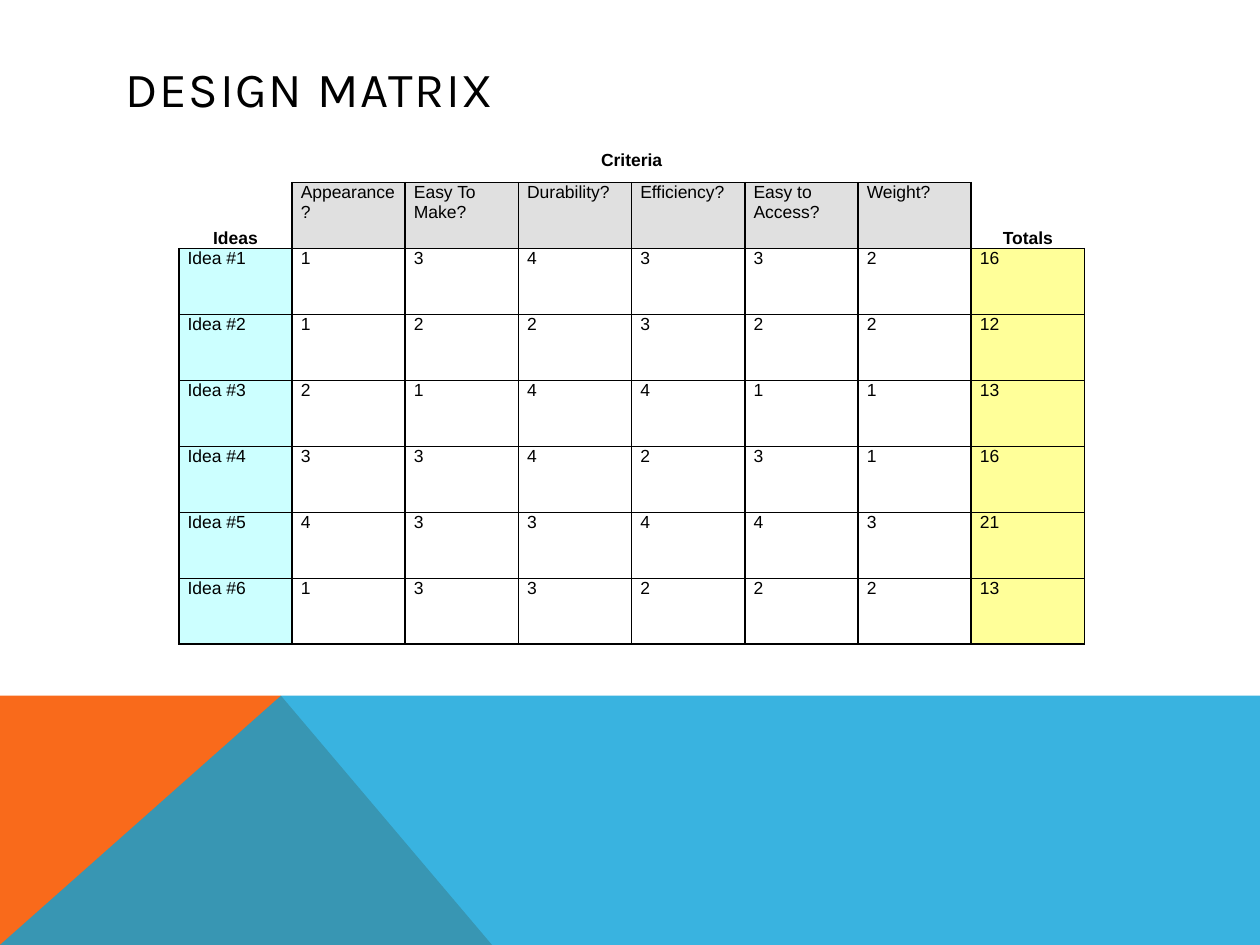
from lxml import etree
from pptx import Presentation
from pptx.dml.color import RGBColor
from pptx.enum.text import MSO_ANCHOR, PP_ALIGN
from pptx.oxml.ns import qn
from pptx.util import Pt

LEFT, CENTER = PP_ALIGN.LEFT, PP_ALIGN.CENTER
TOP, MIDDLE, BOTTOM = MSO_ANCHOR.TOP, MSO_ANCHOR.MIDDLE, MSO_ANCHOR.BOTTOM

BLACK = RGBColor(0x00, 0x00, 0x00)
ORANGE = RGBColor(0xF9, 0x6A, 0x1B)
BLUE = RGBColor(0x08, 0xA1, 0xD9)
CRITERION_GREY = RGBColor(0xE0, 0xE0, 0xE0)
IDEA_CYAN = RGBColor(0xCC, 0xFF, 0xFF)
TOTAL_YELLOW = RGBColor(0xFF, 0xFF, 0x99)

SLIDE_W, SLIDE_H = 720, 540
BAND_TOP, PEAK_X, SLOPE_END = 397.6, 160.6, 281.2
COLUMN_W, CAPTION_H, ROW_H = 64.7, 18, 37.7
NO_STYLE_NO_GRID = "{2D5ABB26-0587-4C30-8999-92F81FD0307C}"

CRITERIA = ["Appearance?", "Easy To Make?", "Durability?", "Efficiency?",
            "Easy to Access?", "Weight?"]
SCORES = [
    [1, 3, 4, 3, 3, 2],
    [1, 2, 2, 3, 2, 2],
    [2, 1, 4, 4, 1, 1],
    [3, 3, 4, 2, 3, 1],
    [4, 3, 3, 4, 4, 3],
    [1, 3, 3, 2, 2, 2],
]
LAST_COLUMN = len(CRITERIA) + 1


def write(frame, text, font="Arial", size=10, bold=False, align=LEFT, spacing=0):
    """Put one formatted paragraph in a text frame; spacing is between letters."""
    paragraph = frame.paragraphs[0]
    paragraph.alignment = align
    if text:
        run = paragraph.add_run()
        run.text = text
        run.font.name = font
        run.font.size = Pt(size)
        run.font.bold = bold
        run.font.color.rgb = BLACK
        if spacing:
            run.font._element.set("spc", str(spacing * 100))
    # An empty cell also needs the size, or its row grows.
    end = paragraph._p.get_or_add_endParaRPr()
    end.set("sz", str(size * 100))


def add_polygon(slide, points, color, opacity=100):
    corners = [(Pt(x), Pt(y)) for x, y in points]
    builder = slide.shapes.build_freeform(*corners[0])
    builder.add_line_segments(corners[1:], close=True)
    polygon = builder.convert_to_shape()
    polygon.shadow.inherit = False
    polygon.line.fill.background()
    polygon.fill.solid()
    polygon.fill.fore_color.rgb = color
    if opacity < 100:
        srgb = polygon._element.spPr.find(".//" + qn("a:srgbClr"))
        etree.SubElement(srgb, qn("a:alpha"), val=str(opacity * 1000))


def add_title(slide, text):
    title = slide.shapes.add_textbox(Pt(64.8), Pt(28.8), Pt(592), Pt(43.2))
    frame = title.text_frame
    frame.word_wrap = True
    frame.vertical_anchor = MIDDLE
    write(frame, text, font="Karla", size=28, spacing=1)


def is_boxed(row, column):
    """Every idea row is ruled; the criteria row only between its end labels."""
    if not 0 <= column <= LAST_COLUMN:
        return False
    return row >= 2 or (row == 1 and 0 < column < LAST_COLUMN)


def set_borders(cell, row, column):
    """Rule each side that this cell or its neighbour has boxed."""
    properties = cell._tc.get_or_add_tcPr()
    neighbours = {"L": (row, column - 1), "R": (row, column + 1),
                  "T": (row - 1, column), "B": (row + 1, column)}
    for side, neighbour in neighbours.items():
        line = etree.SubElement(properties, qn("a:ln" + side), w=str(Pt(1)))
        if is_boxed(row, column) or is_boxed(*neighbour):
            fill = etree.SubElement(line, qn("a:solidFill"))
            etree.SubElement(fill, qn("a:srgbClr"), val=str(BLACK))
        else:
            etree.SubElement(line, qn("a:noFill"))


def cell_color(row, column):
    if not is_boxed(row, column):
        return None
    if row == 1:
        return CRITERION_GREY
    return {0: IDEA_CYAN, LAST_COLUMN: TOTAL_YELLOW}.get(column)


def format_cell(cell, row, column, text):
    cell.margin_left = cell.margin_right = Pt(5)
    cell.margin_top = cell.margin_bottom = Pt(0)
    is_label = not is_boxed(row, column)
    cell.vertical_anchor = BOTTOM if is_label and row == 1 else TOP
    write(cell.text_frame, text, bold=is_label, align=CENTER if is_label else LEFT)
    set_borders(cell, row, column)
    color = cell_color(row, column)
    if color is None:
        cell.fill.background()
    else:
        cell.fill.solid()
        cell.fill.fore_color.rgb = color


def add_matrix(slide):
    rows = [["", "Criteria"] + [""] * len(CRITERIA),
            ["Ideas", *CRITERIA, "Totals"]]
    for number, scores in enumerate(SCORES, start=1):
        rows.append([f"Idea #{number}", *map(str, scores), str(sum(scores))])

    heights = [CAPTION_H] + [ROW_H] * (len(rows) - 1)
    width = COLUMN_W * (LAST_COLUMN + 1)
    frame = slide.shapes.add_table(len(rows), LAST_COLUMN + 1, Pt(102.2), Pt(86.4),
                                   Pt(width), Pt(sum(heights)))
    matrix = frame.table
    matrix.first_row = matrix.horz_banding = False
    matrix._tbl.tblPr.find(qn("a:tableStyleId")).text = NO_STYLE_NO_GRID
    for column in matrix.columns:
        column.width = Pt(COLUMN_W)
    for row, height in zip(matrix.rows, heights):
        row.height = Pt(height)
    matrix.cell(0, 1).merge(matrix.cell(0, len(CRITERIA)))
    for r, texts in enumerate(rows):
        for c, text in enumerate(texts):
            format_cell(matrix.cell(r, c), r, c, text)


def main():
    deck = Presentation()
    deck.slide_width, deck.slide_height = Pt(SLIDE_W), Pt(SLIDE_H)
    slide = deck.slides.add_slide(deck.slide_layouts[6])
    peak = (PEAK_X, BAND_TOP)
    add_polygon(slide, [(0, SLIDE_H), (0, BAND_TOP), peak, (SLOPE_END, SLIDE_H)],
                ORANGE)
    add_polygon(slide, [(0, SLIDE_H), peak, (SLIDE_W, BAND_TOP), (SLIDE_W, SLIDE_H)],
                BLUE, opacity=80)
    add_title(slide, "DESIGN MATRIX")
    add_matrix(slide)
    deck.save("out.pptx")


if __name__ == "__main__":
    main()
